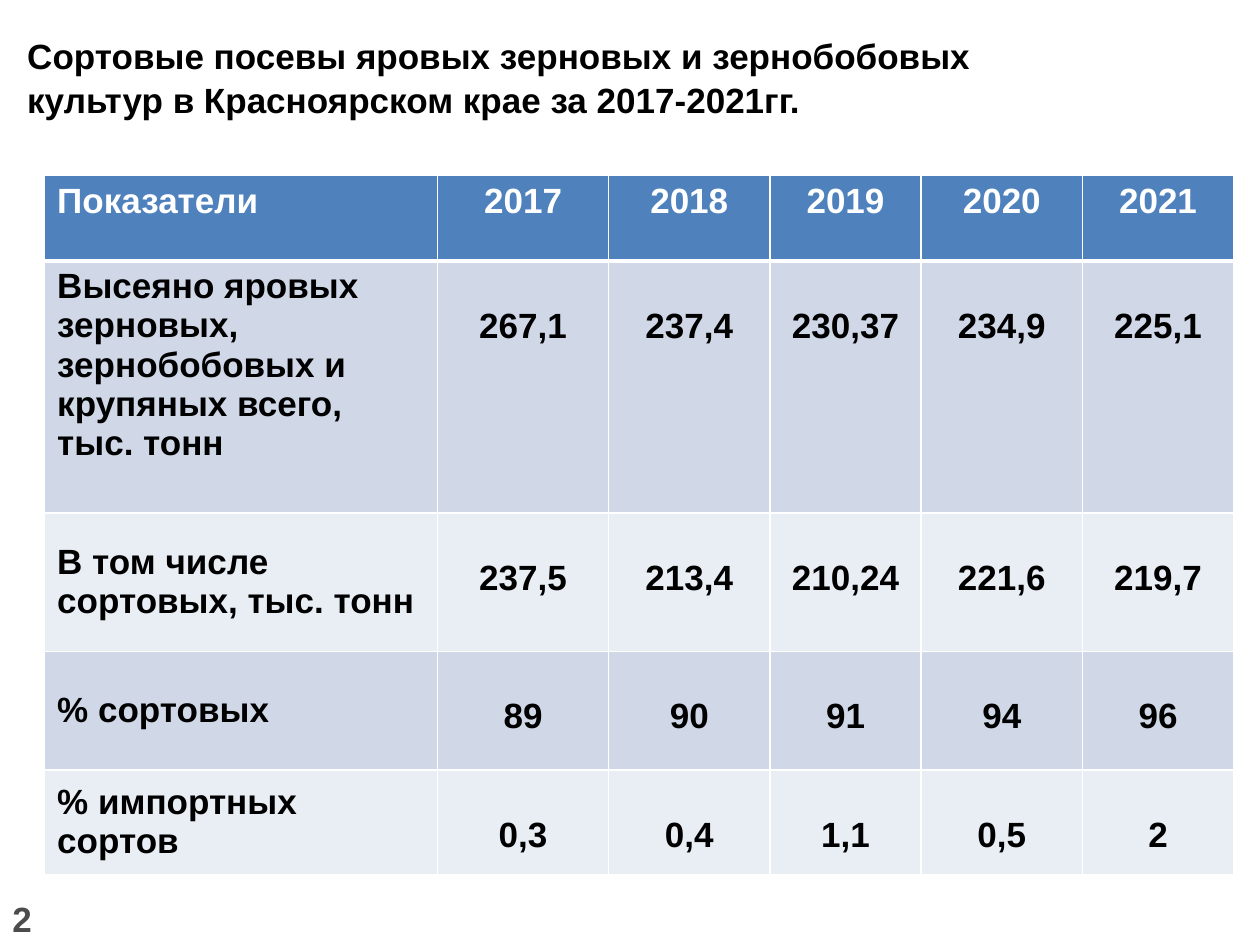
from lxml.etree import SubElement
from pptx import Presentation
from pptx.dml.color import RGBColor
from pptx.enum.text import MSO_ANCHOR, PP_ALIGN
from pptx.oxml.ns import qn
from pptx.util import Cm, Pt

TITLE = ("Сортовые посевы яровых зерновых и зернобобовых\v"
         "культур в Красноярском крае за 2017-2021гг.")
ROWS = [
    ["Показатели", "2017", "2018", "2019", "2020", "2021"],
    ["Высеяно яровых зерновых, зернобобовых и крупяных всего, тыс. тонн",
     "267,1", "237,4", "230,37", "234,9", "225,1"],
    ["В том числе сортовых, тыс. тонн", "237,5", "213,4", "210,24", "221,6", "219,7"],
    ["% сортовых", "89", "90", "91", "94", "96"],
    ["% импортных сортов", "0,3", "0,4", "1,1", "0,5", "2"],
]
WIDTHS = [7.92, 3.45, 3.25, 3.05, 3.25, 3.05]
HEIGHTS = [1.73, 5.08, 2.79, 2.39, 2.11]


def rgb(value):
    return RGBColor.from_string(value)


def write(tf, text, size=20, font="Arial", color="000000", bold=True,
          align=PP_ALIGN.LEFT, spacing=None):
    p = tf.paragraphs[0]
    p.text = text
    p.alignment = align
    p.line_spacing = spacing
    for r in p.runs:
        r.font.name, r.font.size, r.font.bold = font, Pt(size), bold
        r.font.color.rgb = rgb(color)


class Deck:
    """Hold the table style and the current slide."""

    header, bands, border = "4F81BD", ("E9EDF4", "D0D8E8"), "FFFFFF"
    value_top = 0.92

    def __init__(self, s):
        self.s = s

    def text(self, text, x, y, w, h, anchor=MSO_ANCHOR.TOP, **style):
        tf = self.s.shapes.add_textbox(Cm(x), Cm(y), Cm(w), Cm(h)).text_frame
        tf.word_wrap = True
        tf.vertical_anchor = anchor
        write(tf, text, **style)

    def borders(self, cell, top, bottom):
        tc_pr = cell._tc.get_or_add_tcPr()
        for side, width in (("L", 1), ("R", 1), ("T", top), ("B", bottom)):
            ln = SubElement(tc_pr, qn(f"a:ln{side}"), w=str(Pt(width)))
            fill = SubElement(ln, qn("a:solidFill"))
            SubElement(fill, qn("a:srgbClr"), val=self.border)

    def cell(self, cell, text, row, col):
        is_header = row == 0
        self.borders(cell, 3 if row == 1 else 1, 3 if is_header else 1)
        cell.fill.solid()
        cell.fill.fore_color.rgb = rgb(self.header if is_header else self.bands[row % 2])
        if col and not is_header:
            cell.margin_top = Cm(self.value_top)
        if col == 0 and row > 1:
            cell.vertical_anchor = MSO_ANCHOR.MIDDLE
        write(cell.text_frame, text, color="FFFFFF" if is_header else "000000",
              align=PP_ALIGN.CENTER if col else PP_ALIGN.LEFT)

    def table(self, rows, x, y, widths, heights):
        table = self.s.shapes.add_table(len(rows), len(widths), Cm(x), Cm(y),
                                        Cm(sum(widths)), Cm(sum(heights))).table
        for column, width in zip(table.columns, widths):
            column.width = Cm(width)
        for i, (values, height) in enumerate(zip(rows, heights)):
            table.rows[i].height = Cm(height)
            for j, value in enumerate(values):
                self.cell(table.cell(i, j), value, i, j)


def main():
    prs = Presentation()
    prs.slide_width, prs.slide_height = Cm(25.4), Cm(19.05)
    deck = Deck(prs.slides.add_slide(prs.slide_layouts[6]))
    deck.text(TITLE, 0.3, 0.53, 22.76, 2.21, spacing=1.05)
    deck.table(ROWS, 0.9, 3.53, WIDTHS, HEIGHTS)
    deck.text("2", 0, 18.21, 1.5, 0.61, anchor=MSO_ANCHOR.MIDDLE, color="4C4C4C")
    prs.save("out.pptx")


if __name__ == "__main__":
    main()
